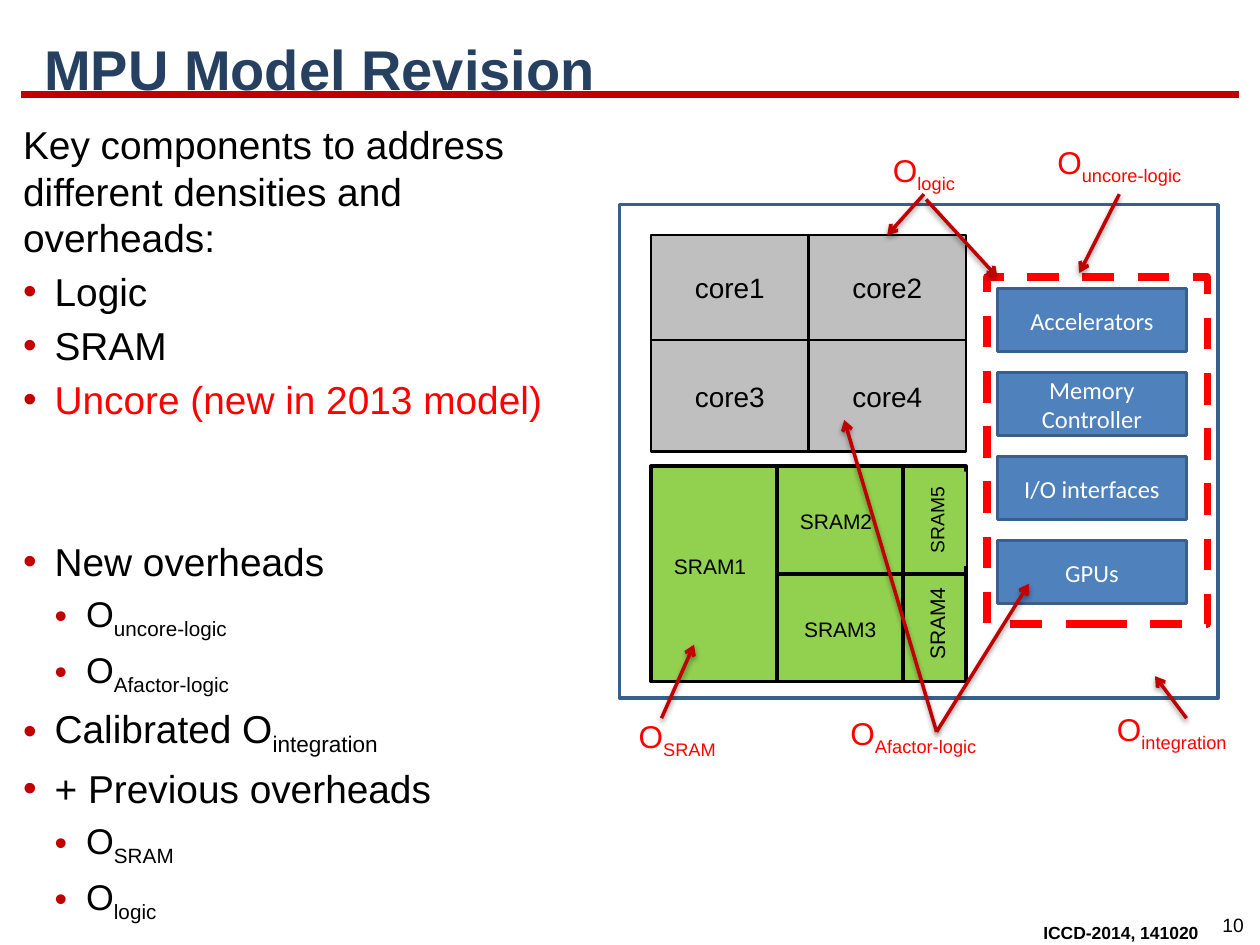
from dataclasses import dataclass
from typing import Optional

from lxml import etree
from pptx import Presentation
from pptx.dml.color import RGBColor
from pptx.enum.dml import MSO_LINE
from pptx.enum.shapes import MSO_CONNECTOR, MSO_SHAPE
from pptx.enum.text import MSO_ANCHOR, MSO_AUTO_SIZE, PP_ALIGN
from pptx.oxml.ns import qn
from pptx.util import Inches, Pt

RECT, STRAIGHT = MSO_SHAPE.RECTANGLE, MSO_CONNECTOR.STRAIGHT
LEFT, CENTER, RIGHT = PP_ALIGN.LEFT, PP_ALIGN.CENTER, PP_ALIGN.RIGHT
TOP, MIDDLE = MSO_ANCHOR.TOP, MSO_ANCHOR.MIDDLE
DASH, NO_FIT = MSO_LINE.DASH, MSO_AUTO_SIZE.NONE
COLS_PER_INCH = 12
BLACK, WHITE, RED, DARK_RED = "000000", "FFFFFF", "FF0000", "C00000"
GREY, GREEN, BLUE, EDGE, NAVY = "BFBFBF", "92D050", "4F81BD", "3A5F8C", "254061"


@dataclass
class Box:
    col: float
    row: float
    cols: float
    rows: float
    text: str = ""
    fill: Optional[str] = None
    line: Optional[str] = None
    width: float = 2
    size: float = 12
    color: str = BLACK
    font: str = "Arial"
    align: PP_ALIGN = CENTER
    rotation: float = 0


@dataclass
class Item:
    text: str
    sub: str = ""
    level: int = 0
    color: str = BLACK
    before: float = 4.2
    bullet: bool = True


def grid(n: float) -> int:
    return Inches(n / COLS_PER_INCH)


def rgb(value: str) -> RGBColor:
    return RGBColor.from_string(value)


def add_run(p, text: str, size: float, color: str, name: str = "Arial",
            bold: bool = False, sub: bool = False) -> None:
    r = p.add_run()
    r.text = text
    for key, value in dict(size=Pt(size), name=name, bold=bold).items():
        setattr(r.font, key, value)
    r.font.color.rgb = rgb(color)
    if sub:
        r._r.get_or_add_rPr().set("baseline", "-25000")


def place(sp, col: float, row: float, cols: float, rows: float) -> None:
    edges = dict(left=col, top=row, width=cols, height=rows)
    for key, value in edges.items():
        setattr(sp, key, grid(value))


def draw_box(s, box: Box):
    sp = s.shapes.add_shape(RECT, *map(grid, (box.col, box.row, box.cols, box.rows)))
    sp.shadow.inherit = False
    sp.rotation = box.rotation
    if box.fill:
        sp.fill.solid()
        sp.fill.fore_color.rgb = rgb(box.fill)
    else:
        sp.fill.background()
    if box.line:
        sp.line.color.rgb = rgb(box.line)
        sp.line.width = Pt(box.width)
    else:
        sp.line.fill.background()
    if box.text:
        tf = sp.text_frame
        tf.word_wrap, tf.vertical_anchor = True, MIDDLE
        p = tf.paragraphs[0]
        p.alignment = box.align
        add_run(p, box.text, box.size, box.color, box.font)
    return sp


def draw_text(s, col: float, row: float, cols: float, rows: float, text: str,
              sub: str = "", size: float = 18, color: str = RED,
              align: PP_ALIGN = CENTER, bold: bool = False, wrap: bool = True) -> None:
    tf = s.shapes.add_textbox(*map(grid, (col, row, cols, rows))).text_frame
    tf.word_wrap = wrap
    p = tf.paragraphs[0]
    p.alignment = align
    add_run(p, text, size, color, bold=bold)
    if sub:
        add_run(p, sub, size, color, sub=True)


def draw_line(s, x1: float, y1: float, x2: float, y2: float, color: str, width: float):
    c = s.shapes.add_connector(STRAIGHT, *map(grid, (x1, y1, x2, y2)))
    c.line.color.rgb = rgb(color)
    c.line.width = Pt(width)
    etree.SubElement(c._element.spPr, qn("a:effectLst"))
    return c


def draw_arrow(s, x1: float, y1: float, x2: float, y2: float):
    c = draw_line(s, x1, y1, x2, y2, DARK_RED, 2)
    etree.SubElement(c.line._get_or_add_ln(), qn("a:tailEnd"), type="arrow")
    shadow = etree.SubElement(c._element.spPr.find(qn("a:effectLst")), qn("a:outerShdw"),
                              blurRad=str(Pt(3.1)), dist=str(Pt(1.6)), dir="5400000")
    tint = etree.SubElement(shadow, qn("a:srgbClr"), val=BLACK)
    etree.SubElement(tint, qn("a:alpha"), val="38000")
    return c


def write_item(p, item: Item) -> None:
    p.level, p.alignment = item.level, LEFT
    p.space_before, p.line_spacing = Pt(item.before), 1.0
    pPr = p._p.get_or_add_pPr()
    indent = Inches(0.25) if item.bullet else 0
    pPr.set("marL", str(indent * (item.level + 1)))
    pPr.set("indent", str(-indent))
    if item.bullet:
        tint = etree.SubElement(pPr, qn("a:buClr"))
        etree.SubElement(tint, qn("a:srgbClr"), val=DARK_RED)
        etree.SubElement(pPr, qn("a:buFont"), typeface="Arial")
        etree.SubElement(pPr, qn("a:buChar"), char="•")
    else:
        etree.SubElement(pPr, qn("a:buNone"))
    size = 20.4 if item.level else 22.2
    add_run(p, item.text, size, item.color)
    if item.sub:
        add_run(p, item.sub, size, item.color, sub=True)


ITEMS = [
    Item("Key components to address different densities and overheads:", bullet=False),
    Item("Logic"), Item("SRAM"), Item("Uncore (new in 2013 model)", color=RED),
    Item("New overheads", before=66),
    Item("O", "uncore-logic", 1), Item("O", "Afactor-logic", 1),
    Item("Calibrated O", "integration"), Item("+ Previous overheads"),
    Item("O", "SRAM", 1), Item("O", "logic", 1),
]
SRAM_CELLS = [(62, 44.4, 12, 20.5)] + [
    (col, row, cols, 10.25) for row in (44.4, 54.65) for col, cols in ((74, 12), (86, 6))]
SRAM_LABELS = [
    Box(63, 47.4, 10, 13, "SRAM1", GREEN, align=LEFT),
    Box(75, 46.4, 10, 6.5, "SRAM2", GREEN, align=LEFT),
    Box(75.4, 55.2, 10, 9.5, "SRAM3", GREEN, align=LEFT),
    Box(84.7, 46.6, 9, 5.6, "SRAM5", GREEN, size=11, align=LEFT, rotation=270),
    Box(84.2, 56.6, 10, 5.6, "SRAM4", rotation=270),
]
UNCORE = ["Accelerators", "Memory Controller", "I/O interfaces", "GPUs"]
OVERHEADS = [
    (102.8, 67, 17.6, 6, "O", "integration"), (56.5, 67.7, 16, 4, "O", "SRAM"),
    (80, 13.8, 16, 4, "O", "logic"), (77, 67.4, 20, 3.5, "O", "Afactor-logic"),
    (93.7, 13, 25.8, 4, "O", "uncore-logic"),
]
ARROWS = [
    (113, 68.4, 110, 64.4), (63, 68.4, 66.1, 61.4), (89.2, 69.7, 98, 55.6),
    (88.2, 19, 95, 26.4), (106.6, 18.5, 102.8, 26), (89.2, 69.7, 80.4, 40),
]


def main() -> None:
    prs = Presentation()
    prs.slide_width, prs.slide_height = Inches(10), Inches(7.5)
    s = prs.slides.add_slide(prs.slide_layouts[1])
    title, body = s.placeholders
    place(title, 3, 2, 116, 9)
    tf = title.text_frame
    tf.auto_size, tf.vertical_anchor = NO_FIT, MIDDLE
    tf.paragraphs[0].alignment = LEFT
    add_run(tf.paragraphs[0], "MPU Model Revision", 32, NAVY, bold=True)
    place(body, 1, 10.9, 57, 74)
    tf = body.text_frame
    tf.auto_size, tf.vertical_anchor = NO_FIT, TOP
    for i, item in enumerate(ITEMS):
        write_item(tf.add_paragraph() if i else tf.paragraphs[0], item)

    rule = draw_line(s, 2, 9, 118, 9, DARK_RED, 4.5)
    s.shapes._spTree.insert(2, rule._element)
    draw_text(s, 115.1, 86.4, 4.7, 3.5, "10", size=11, color=BLACK, wrap=False)
    draw_text(s, 83.2, 87.2, 32.1, 3.2, "ICCD-2014, 141020", size=10, color=BLACK,
              align=RIGHT, bold=True)

    draw_box(s, Box(94, 26.4, 21, 33, line=RED, width=4.5)).line.dash_style = DASH
    draw_box(s, Box(59, 19.5, 57, 47, line=EDGE))
    for cell in SRAM_CELLS:
        draw_box(s, Box(*cell, fill=GREEN, line=BLACK))
    for label in SRAM_LABELS:
        draw_box(s, label)
    cores = [draw_box(s, Box(62 + 15 * (i % 2), row, 15, rows, f"core{i + 1}",
                             GREY, BLACK, 1.5, 16))
             for i, (row, rows) in enumerate([(22.4, 10)] * 2 + [(32.4, 10.6)] * 2)]
    for i, name in enumerate(UNCORE):
        draw_box(s, Box(95, 27.5 + 8 * i, 18, 6, name, BLUE, EDGE, 2, 14, WHITE, "Calibri"))
    for overhead in OVERHEADS:
        draw_text(s, *overhead)
    for arrow in ARROWS:
        draw_arrow(s, *arrow)
    draw_arrow(s, 88, 18.5, 84.5, 22.4).end_connect(cores[1], 0)
    prs.save("out.pptx")


if __name__ == "__main__":
    main()
